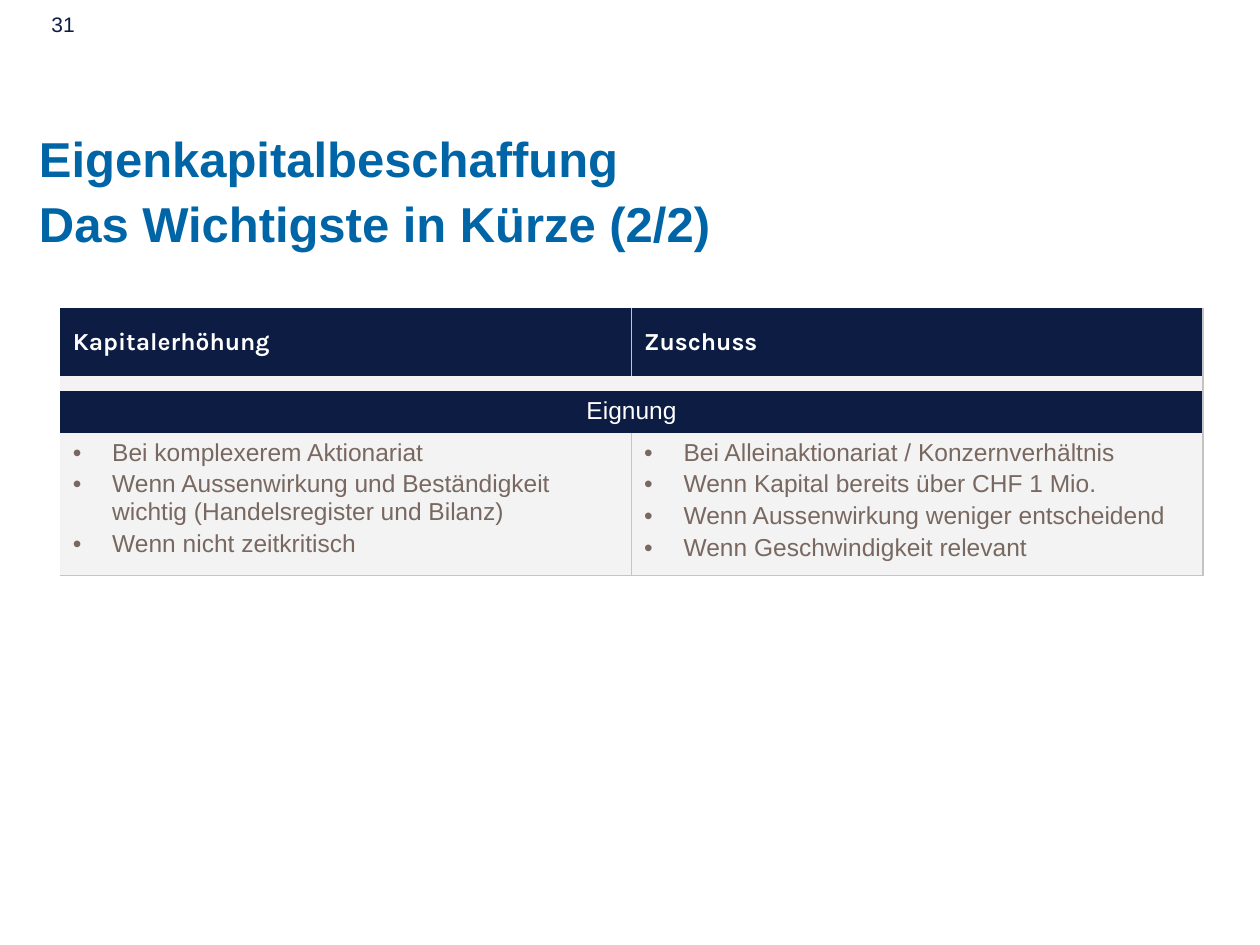
import pptx
import pptx.util
import pptx.dml.color
import pptx.enum.text
import pptx.oxml
import pptx.oxml.ns

Pt = pptx.util.Pt
ALIGN = pptx.enum.text.PP_ALIGN
ANCHOR = pptx.enum.text.MSO_ANCHOR

THEME = {
    "navy": "0C1C43", "blue": "0065A6", "white": "FFFFFF",
    "brown": "786860", "pale": "F3F3F3", "line": "C4C4C4",
    "sans": "Arial", "head": "Karla",
    "title": 28, "body": 14, "small": 12, "gap": 1,
}

PAGE = "31"
TITLE = "Eigenkapitalbeschaffung\vDas Wichtigste in Kürze (2/2)"
HEADS = ["Kapitalerhöhung", "Zuschuss"]
BAND = "Eignung"
POINTS = [
    [
        "Bei komplexerem Aktionariat",
        "Wenn Aussenwirkung und Beständigkeit wichtig (Handelsregister und Bilanz)",
        "Wenn nicht zeitkritisch",
    ],
    [
        "Bei Alleinaktionariat / Konzernverhältnis",
        "Wenn Kapital bereits über CHF 1 Mio.",
        "Wenn Aussenwirkung weniger entscheidend",
        "Wenn Geschwindigkeit relevant",
    ],
]
ROWS = [38.9, 8.3, 23.1, 78.6]
LEFT, TOP, WIDTH = 34.4, 175.9, 653


def color(name):
    return pptx.dml.color.RGBColor.from_string(THEME[name])


def make(tag, **attrs):
    node = pptx.oxml.parse_xml(f"<a:{tag} {pptx.oxml.ns.nsdecls('a')}/>")
    for key, value in attrs.items():
        node.set(key, str(value))
    return node


def write(frame, lines, size="body", ink="white", face="sans", bold=False,
          align=ALIGN.LEFT, space=None, bullet=False):
    for i, line in enumerate(lines):
        para = frame.paragraphs[0] if i == 0 else frame.add_paragraph()
        para.text = line
        para.alignment = align
        if space:
            para.line_spacing = space
        if i:
            para.space_before = Pt(2.4)
        if bullet:
            props = para._p.get_or_add_pPr()
            props.set("marL", str(Pt(22.5)))
            props.set("indent", str(-Pt(22.5)))
            props.append(make("buFont", typeface=THEME["sans"]))
            props.append(make("buChar", char="•"))
        for run in para.runs:
            font = run.font
            font.size = Pt(THEME[size])
            font.name = THEME[face]
            font.bold = bold
            font.color.rgb = color(ink)


def box(slide, rect, lines, inset=None, anchor=ANCHOR.TOP, **style):
    frame = slide.shapes.add_textbox(*map(Pt, rect)).text_frame
    frame.word_wrap = True
    frame.vertical_anchor = anchor
    if inset is not None:
        frame.margin_left = frame.margin_right = Pt(inset)
        frame.margin_top = frame.margin_bottom = Pt(inset)
    write(frame, lines, **style)


def edge(cell, sides):
    """Draw the named sides and clear the others, ahead of the cell fill."""
    props = cell._tc.get_or_add_tcPr()
    for i, side in enumerate("LRTB"):
        line = make(f"ln{side}", w=Pt(1))
        if side in sides:
            fill = make("solidFill")
            fill.append(make("srgbClr", val=THEME["line"]))
        else:
            fill = make("noFill")
        line.append(fill)
        props.insert(i, line)


def grid(slide):
    shape = slide.shapes.add_table(
        len(ROWS), len(HEADS), Pt(LEFT), Pt(TOP), Pt(WIDTH), Pt(sum(ROWS)))
    table = shape.table
    table.first_row = table.horz_banding = False
    for col in table.columns:
        col.width = Pt(WIDTH / len(HEADS))
    fills = ["navy", "pale", "navy", "pale"]
    for r, (high, fill) in enumerate(zip(ROWS, fills)):
        table.rows[r].height = Pt(high)
        for c in range(len(HEADS)):
            cell = table.cell(r, c)
            cell.fill.solid()
            cell.fill.fore_color.rgb = color(fill)
            edge(cell, "LRB" if c else "RB")
    for r in (1, 2):
        table.cell(r, 0).merge(table.cell(r, 1))
    for c, (head, points) in enumerate(zip(HEADS, POINTS)):
        cell = table.cell(0, c)
        cell.vertical_anchor = ANCHOR.MIDDLE
        write(cell.text_frame, [head], face="head", bold=True)
        write(table.cell(3, c).text_frame, points, ink="brown", bullet=True)
        # A tiny type size keeps the empty row thin.
        para = table.cell(1, c).text_frame.paragraphs[0]
        para._p.append(make("endParaRPr", sz=THEME["gap"] * 100))
    write(table.cell(2, 0).text_frame, [BAND], align=ALIGN.CENTER)


def main():
    deck = pptx.Presentation()
    deck.slide_width, deck.slide_height = Pt(720), Pt(540)
    slide = deck.slides.add_slide(deck.slide_layouts[6])
    box(slide, (22.3, 69.1, 674.6, 76.3), [TITLE], inset=0,
        anchor=ANCHOR.MIDDLE, size="title", ink="blue", bold=True, space=1.1)
    box(slide, (22.3, 2.9, 167.8, 20.9), [PAGE], size="small", ink="navy")
    grid(slide)
    deck.save("out.pptx")


if __name__ == "__main__":
    main()
